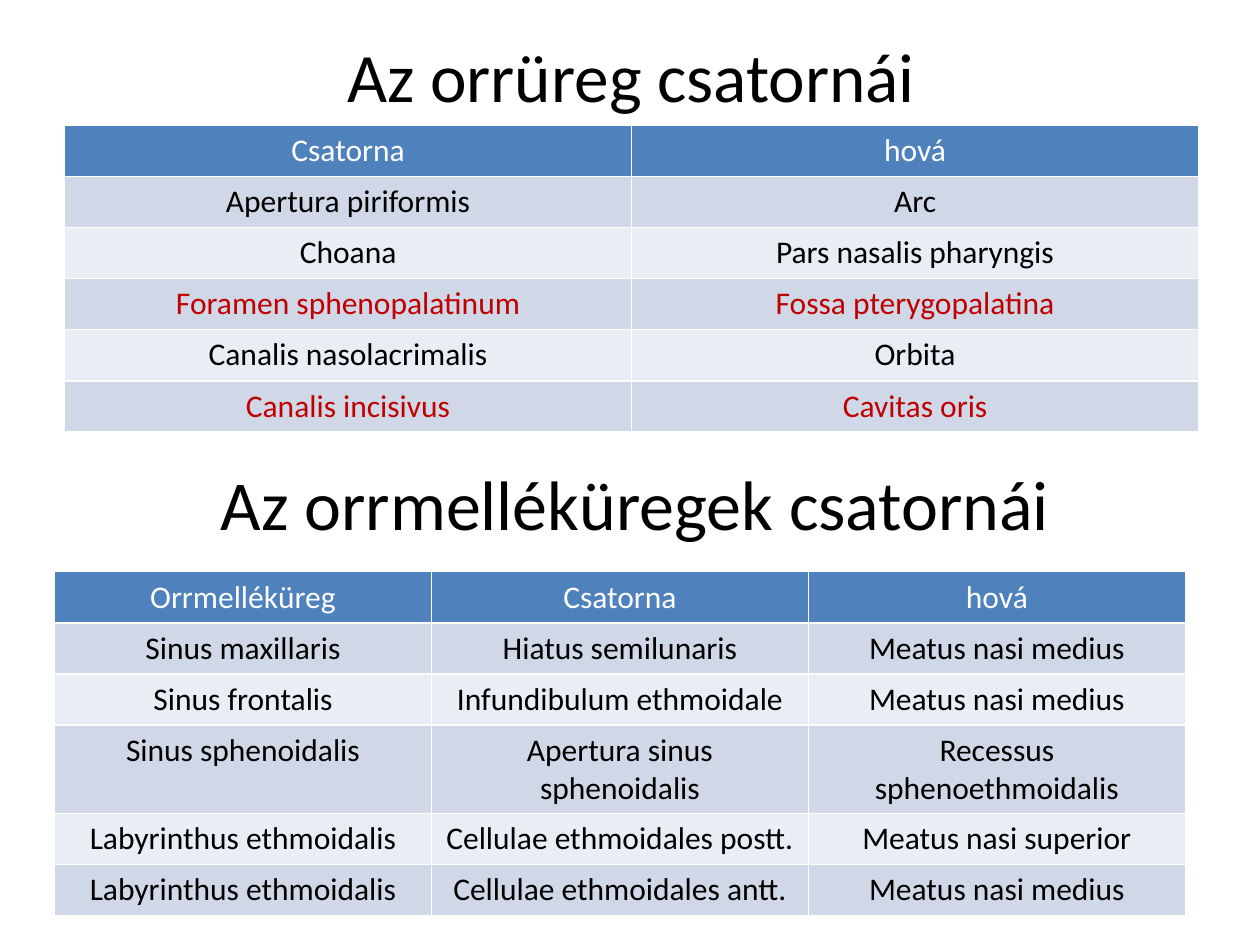
from pptx import Presentation
from pptx.dml.color import RGBColor
from pptx.enum.text import MSO_ANCHOR as Anchor, PP_ALIGN as Align
from pptx.util import Pt

BLACK, WHITE, RED = "000000", "FFFFFF", "C00000"
HEADER_FILL, BAND_FILLS = "4F81BD", ("D0D8E8", "E9EDF4")
ROW_HEIGHT = 29.2


def color(hex_string):
    return RGBColor.from_string(hex_string)


def write_text(frame, text, size, text_color):
    frame.word_wrap = True
    paragraph = frame.paragraphs[0]
    paragraph.alignment = Align.CENTER
    run = paragraph.add_run()
    run.text = text
    run.font.name = "Calibri"
    run.font.size = Pt(size)
    run.font.bold = False
    run.font.color.rgb = color(text_color)


presentation = Presentation()
presentation.slide_width, presentation.slide_height = Pt(720), Pt(540)
slide = presentation.slides.add_slide(presentation.slide_layouts[5])

# Headings: the title placeholder and a text box for the second table
title = slide.shapes.title
title.left, title.top, title.width, title.height = Pt(36.7), Pt(15.1), Pt(648), Pt(55.4)
subtitle = slide.shapes.add_textbox(Pt(38.9), Pt(258.5), Pt(648), Pt(56.9))
for heading, text, size in (
    (title, "Az orrüreg csatornái", 39.6),
    (subtitle, "Az orrmelléküregek csatornái", 40),
):
    heading.text_frame.vertical_anchor = Anchor.MIDDLE
    write_text(heading.text_frame, text, size, BLACK)

# Table contents, header row first
nasal_cavity = [
    ("Csatorna", "hová"),
    ("Apertura piriformis", "Arc"),
    ("Choana", "Pars nasalis pharyngis"),
    ("Foramen sphenopalatinum", "Fossa pterygopalatina"),
    ("Canalis nasolacrimalis", "Orbita"),
    ("Canalis incisivus", "Cavitas oris"),
]
paranasal_sinuses = [
    ("Orrmelléküreg", "Csatorna", "hová"),
    ("Sinus maxillaris", "Hiatus semilunaris", "Meatus nasi medius"),
    ("Sinus frontalis", "Infundibulum ethmoidale", "Meatus nasi medius"),
    ("Sinus sphenoidalis", "Apertura sinus sphenoidalis", "Recessus sphenoethmoidalis"),
    ("Labyrinthus ethmoidalis", "Cellulae ethmoidales postt.", "Meatus nasi superior"),
    ("Labyrinthus ethmoidalis", "Cellulae ethmoidales antt.", "Meatus nasi medius"),
]

# Tables; the default table style draws the white borders
for rows, left, top, column_width, red_rows in (
    (nasal_cavity, 36.9, 71.6, 324, {3, 5}),
    (paranasal_sinuses, 31.2, 326.7, 215.4, set()),
):
    column_count = len(rows[0])
    table = slide.shapes.add_table(
        len(rows), column_count, Pt(left), Pt(top),
        Pt(column_width * column_count), Pt(ROW_HEIGHT * len(rows)),
    ).table
    for column in table.columns:
        column.width = Pt(column_width)
    for row_index, texts in enumerate(rows):
        table.rows[row_index].height = Pt(ROW_HEIGHT)
        if row_index == 0:
            fill, text_color = HEADER_FILL, WHITE
        else:
            fill = BAND_FILLS[(row_index - 1) % 2]
            text_color = RED if row_index in red_rows else BLACK
        for column_index, text in enumerate(texts):
            cell = table.cell(row_index, column_index)
            cell.fill.solid()
            cell.fill.fore_color.rgb = color(fill)
            write_text(cell.text_frame, text, 18, text_color)

presentation.save("out.pptx")
